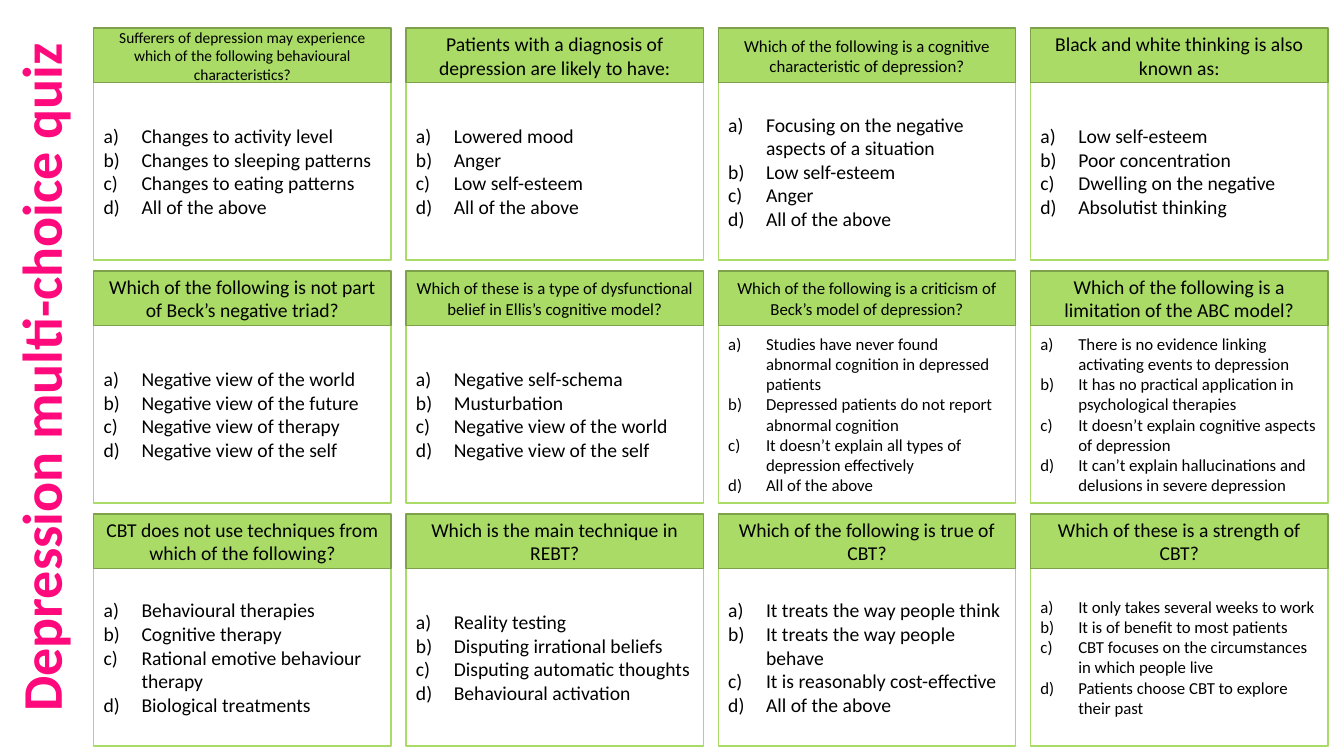
import pptx
import pptx.util
import pptx.dml.color
import pptx.enum.shapes
import pptx.enum.text
import pptx.oxml.ns
import lxml.etree

Inches = pptx.util.Inches
COLORS = {"green": "A9DB66", "dark green": "7DA24B", "white": "FFFFFF",
          "black": "000000", "pink": "FF097C"}
FONT = "Calibri"

# Card grid, in inches
GRID_LEFT, GRID_TOP = 0.93, 0.28
COLUMN_STEP, ROW_STEP = 3.097, 2.41
CARD_WIDTH, QUESTION_HEIGHT, ANSWER_HEIGHT = 2.95, 0.54, 1.76
ANSWER_INDENT = 0.375

# Rows of cards: question, question size, answers, answer size
QUIZ = [
    [
        ("Sufferers of depression may experience which of the following behavioural characteristics?", 11,
         ["Changes to activity level", "Changes to sleeping patterns",
          "Changes to eating patterns", "All of the above"], 14),
        ("Patients with a diagnosis of depression are likely to have:", 14,
         ["Lowered mood", "Anger", "Low self-esteem", "All of the above"], 14),
        ("Which of the following is a cognitive characteristic of depression?", 12,
         ["Focusing on the negative aspects of a situation", "Low self-esteem",
          "Anger", "All of the above"], 14),
        ("Black and white thinking is also known as:", 14,
         ["Low self-esteem", "Poor concentration",
          "Dwelling on the negative", "Absolutist thinking"], 14),
    ],
    [
        ("Which of the following is not part of Beck’s negative triad?", 14,
         ["Negative view of the world", "Negative view of the future",
          "Negative view of therapy", "Negative view of the self"], 14),
        ("Which of these is a type of dysfunctional belief in Ellis’s cognitive model?", 12,
         ["Negative self-schema", "Musturbation",
          "Negative view of the world", "Negative view of the self"], 14),
        ("Which of the following is a criticism of Beck’s model of depression?", 12,
         ["Studies have never found abnormal cognition in depressed patients",
          "Depressed patients do not report abnormal cognition",
          "It doesn’t explain all types of depression effectively", "All of the above"], 12),
        ("Which of the following is a limitation of the ABC model?", 14,
         ["There is no evidence linking activating events to depression",
          "It has no practical application in psychological therapies",
          "It doesn’t explain cognitive aspects of depression",
          "It can’t explain hallucinations and delusions in severe depression"], 12),
    ],
    [
        ("CBT does not use techniques from which of the following?", 14,
         ["Behavioural therapies", "Cognitive therapy",
          "Rational emotive behaviour therapy", "Biological treatments"], 14),
        ("Which is the main technique in REBT?", 14,
         ["Reality testing", "Disputing irrational beliefs",
          "Disputing automatic thoughts", "Behavioural activation"], 14),
        ("Which of the following is true of CBT?", 14,
         ["It treats the way people think", "It treats the way people behave",
          "It is reasonably cost-effective", "All of the above"], 14),
        ("Which of these is a strength of CBT?", 14,
         ["It only takes several weeks to work", "It is of benefit to most patients",
          "CBT focuses on the circumstances in which people live",
          "Patients choose CBT to explore their past"], 12),
    ],
]


def write_paragraphs(shape, texts, size, color, alignment):
    frame = shape.text_frame
    frame.word_wrap = True
    frame.text = "\n".join(texts)
    for paragraph in frame.paragraphs:
        paragraph.alignment = alignment
        paragraph.font.name = FONT
        paragraph.font.size = pptx.util.Pt(size)
        paragraph.font.color.rgb = pptx.dml.color.RGBColor.from_string(COLORS[color])
    return frame


def add_box(left, top, height, fill, line, texts, size, alignment):
    shape = slide.shapes.add_shape(
        pptx.enum.shapes.MSO_SHAPE.RECTANGLE,
        Inches(left), Inches(top), Inches(CARD_WIDTH), Inches(height))
    shape.shadow.inherit = False
    shape.fill.solid()
    shape.fill.fore_color.rgb = pptx.dml.color.RGBColor.from_string(COLORS[fill])
    shape.line.color.rgb = pptx.dml.color.RGBColor.from_string(COLORS[line])
    shape.line.width = pptx.util.Pt(1)
    frame = write_paragraphs(shape, texts, size, "black", alignment)
    frame.vertical_anchor = pptx.enum.text.MSO_ANCHOR.MIDDLE
    return frame


presentation = pptx.Presentation()
presentation.slide_width = Inches(13.33)
presentation.slide_height = Inches(7.5)
slide = presentation.slides.add_slide(presentation.slide_layouts[6])
CENTER = pptx.enum.text.PP_ALIGN.CENTER
LEFT = pptx.enum.text.PP_ALIGN.LEFT

# Quiz cards: lettered answers below a question bar
for row, cards in enumerate(QUIZ):
    for column, (question, question_size, answers, answer_size) in enumerate(cards):
        left = GRID_LEFT + column * COLUMN_STEP
        top = GRID_TOP + row * ROW_STEP
        answer_frame = add_box(left, top + QUESTION_HEIGHT, ANSWER_HEIGHT,
                               "white", "green", answers, answer_size, LEFT)
        for paragraph in answer_frame.paragraphs:
            properties = paragraph._p.get_or_add_pPr()
            properties.set("marL", str(Inches(ANSWER_INDENT)))
            properties.set("indent", str(-Inches(ANSWER_INDENT)))
            numbering = lxml.etree.Element(pptx.oxml.ns.qn("a:buAutoNum"), type="alphaLcParenR")
            properties.insert_element_before(numbering, "a:tabLst", "a:defRPr", "a:extLst")
        add_box(left, top, QUESTION_HEIGHT, "green", "dark green",
                [question], question_size, CENTER)

# Vertical title along the left edge
title = slide.shapes.add_textbox(Inches(-3.35), Inches(3.36), Inches(7.49), Inches(0.77))
title.rotation = 270
title_frame = write_paragraphs(title, ["Depression multi-choice quiz"], 40, "pink", CENTER)
title_frame.auto_size = pptx.enum.text.MSO_AUTO_SIZE.SHAPE_TO_FIT_TEXT
title_frame.paragraphs[0].font.bold = True

presentation.save("out.pptx")
